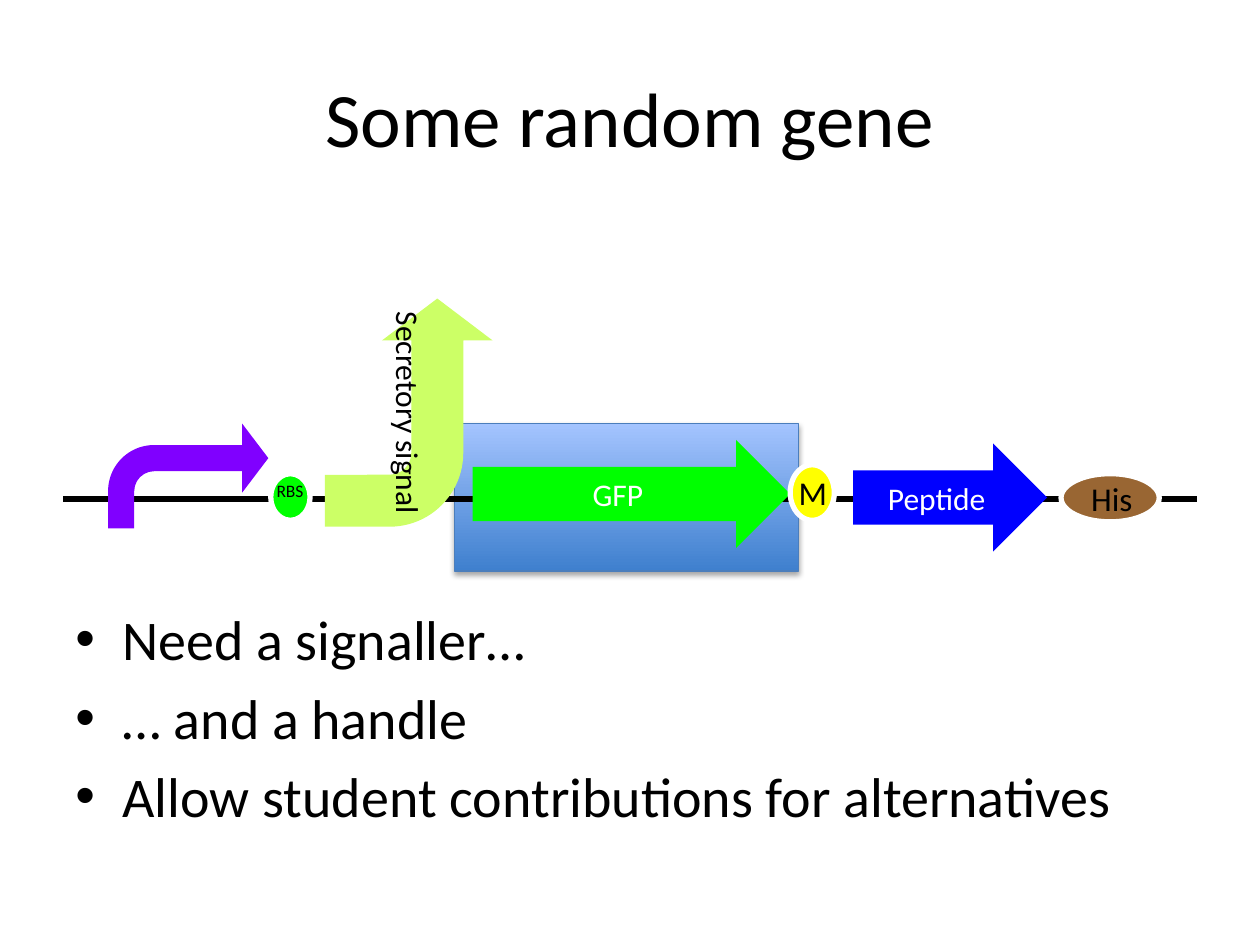
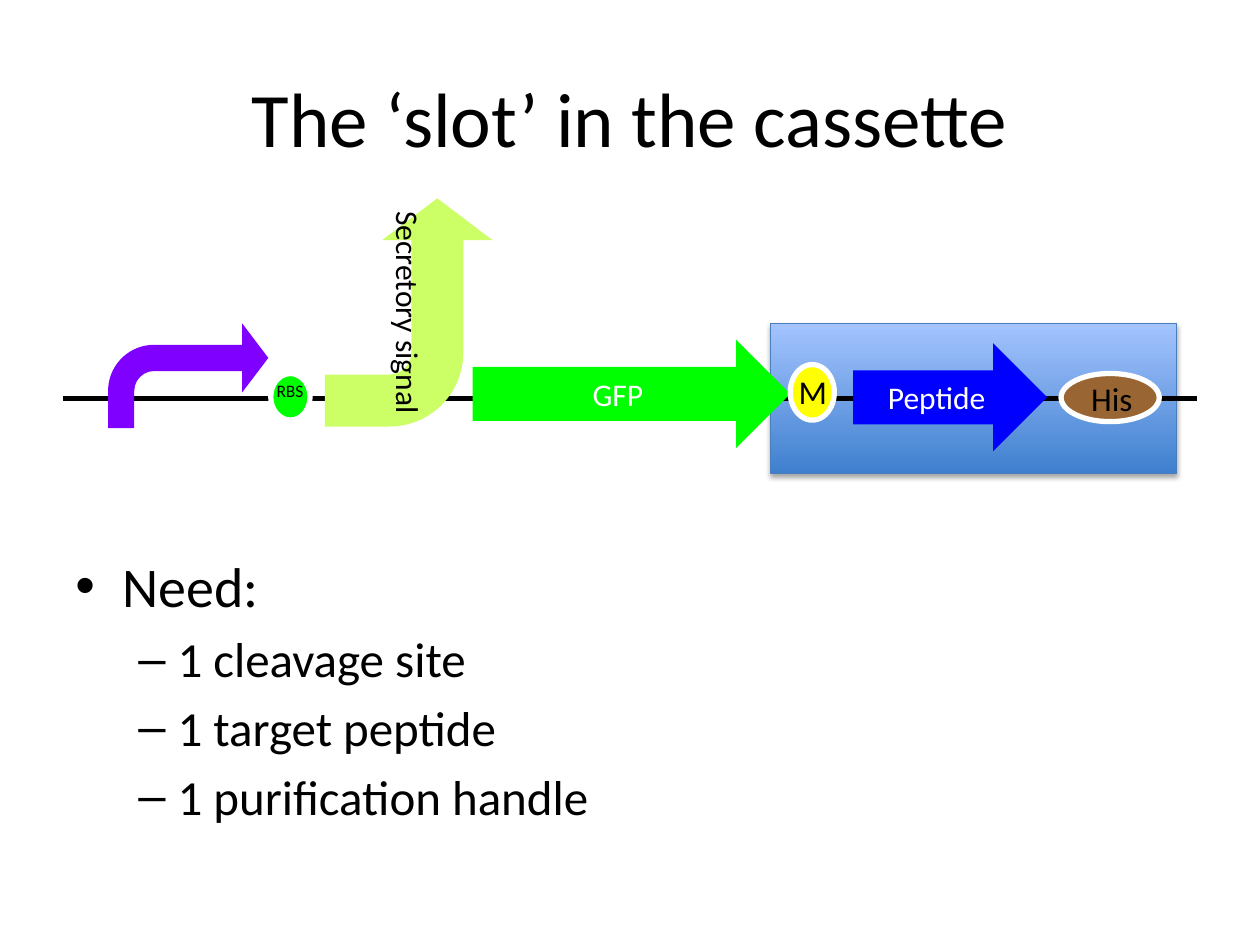
from lxml.etree import SubElement
from pptx import Presentation
from pptx.dml.color import RGBColor
from pptx.enum.shapes import MSO_CONNECTOR, MSO_SHAPE as Preset
from pptx.enum.text import MSO_ANCHOR as Anchor, PP_ALIGN as Align
from pptx.oxml.ns import qn
from pptx.util import Cm, Pt

BLACK = RGBColor(0x00, 0x00, 0x00)
WHITE = RGBColor(0xFF, 0xFF, 0xFF)
PURPLE = RGBColor(0x80, 0x00, 0xFF)
GREEN = RGBColor(0x00, 0xFF, 0x00)
LIME = RGBColor(0xCC, 0xFF, 0x66)
YELLOW = RGBColor(0xFF, 0xFF, 0x00)
BLUE = RGBColor(0x00, 0x00, 0xFF)
BROWN = RGBColor(0x99, 0x66, 0x33)
SLOT_DARK = RGBColor(0x3F, 0x80, 0xCE)
SLOT_LIGHT = RGBColor(0xA4, 0xC4, 0xFF)
SLOT_EDGE = RGBColor(0x4B, 0x7E, 0xBC)

FONT = "Calibri"
MARGIN, CONTENT_WIDTH = 1.27, 22.86
# Per list level: bullet, text size, left indent and hanging indent in cm
LEVELS = (("•", 32, 0.95, 0.95), ("–", 28, 2.06, 0.79))


class GeneDeck:
    """Holds the deck, the current page and the height of its DNA strand."""

    def __init__(self):
        self.deck = Presentation()
        self.deck.slide_width, self.deck.slide_height = Cm(25.4), Cm(19.05)
        self.page = None
        self.strand_y = 0

    def add_page(self, title, strand_y):
        self.page = self.deck.slides.add_slide(self.deck.slide_layouts[5])
        self.strand_y = strand_y
        box = self.page.shapes.title
        box.left, box.top = Cm(MARGIN), Cm(0.76)
        box.width, box.height = Cm(CONTENT_WIDTH), Cm(3.18)
        self.set_text(box, title, 44, BLACK)

    def set_text(self, box, text, size, color, align=Align.CENTER,
                 anchor=Anchor.MIDDLE, tight=False):
        frame = box.text_frame
        frame.word_wrap = True
        frame.vertical_anchor = anchor
        if tight:
            frame.margin_left = frame.margin_right = 0
            frame.margin_top = frame.margin_bottom = 0
        frame.text = text
        para = frame.paragraphs[0]
        para.alignment = align
        self.style(para, size, color)

    def style(self, para, size, color):
        para.font.name, para.font.size = FONT, Pt(size)
        para.font.color.rgb = color

    def place(self, left, rise, width, height):
        """Turn a position relative to the strand into slide lengths."""
        return Cm(left), Cm(self.strand_y + rise), Cm(width), Cm(height)

    def add_part(self, preset, area, color, outlined=False, adjust=()):
        part = self.page.shapes.add_shape(preset, *self.place(*area))
        part.shadow.inherit = False
        part.fill.solid()
        part.fill.fore_color.rgb = color
        if outlined:
            part.line.color.rgb, part.line.width = WHITE, Pt(3)
        else:
            part.line.fill.background()
        for index, value in enumerate(adjust):
            part.adjustments[index] = value
        return part

    def add_label(self, area, text, align=Align.CENTER):
        box = self.page.shapes.add_textbox(*self.place(*area))
        self.set_text(box, text, 19, BLACK, align, tight=True)

    def add_slot(self, area):
        slot = self.page.shapes.add_shape(Preset.RECTANGLE, *self.place(*area))
        slot.fill.gradient()
        slot.fill.gradient_angle = 90
        for stop, color in zip(slot.fill.gradient_stops, (SLOT_DARK, SLOT_LIGHT)):
            stop.color.rgb = color
        slot.line.color.rgb, slot.line.width = SLOT_EDGE, Pt(0.75)
        # Soft shadow below
        slot.shadow.inherit = False
        effects = slot.element.spPr.find(qn("a:effectLst"))
        shadow = SubElement(effects, qn("a:outerShdw"), blurRad=str(Pt(3.1)),
                            dist=str(Pt(1.8)), dir="5400000", rotWithShape="0")
        tint = SubElement(shadow, qn("a:srgbClr"), val="000000")
        SubElement(tint, qn("a:alpha"), val="35000")

    def add_strand(self):
        y = Cm(self.strand_y)
        strand = self.page.shapes.add_connector(
            MSO_CONNECTOR.STRAIGHT, Cm(MARGIN), y, Cm(MARGIN + CONTENT_WIDTH), y)
        strand.line.color.rgb, strand.line.width = BLACK, Pt(3)
        SubElement(strand.element.spPr, qn("a:effectLst"))

    def add_cassette(self):
        self.add_strand()

        # Promoter
        self.add_part(Preset.BENT_ARROW, (2.18, -1.52, 3.23, 2.11), PURPLE,
                      adjust=(0.25, 0.33, 0.25, 0.44))

        # Reporter, secretory signal and ribosome binding site
        reporter = self.add_part(Preset.RIGHT_ARROW, (9.53, -1.19, 6.4, 2.18), GREEN)
        self.set_text(reporter, "GFP", 18, WHITE)
        signal = self.add_part(Preset.BENT_ARROW, (5.94, -3.43, 4.6, 3.38), LIME,
                               adjust=(0.31, 0.33, 0.25, 0.44))
        signal.rotation = 270
        signal.element.spPr.find(qn("a:xfrm")).set("flipV", "1")
        self.set_text(signal, "Secretory signal", 18, BLACK)
        binding = self.add_part(Preset.OVAL, (5.46, -0.51, 0.79, 0.94), GREEN, True)
        self.set_text(binding, "RBS", 10, BLACK, Align.LEFT, Anchor.TOP, tight=True)

        # Cleavage site
        self.add_part(Preset.OVAL, (15.93, -0.69, 0.89, 1.12), YELLOW, True)
        self.add_label((16.1, -0.69, 0.71, 1.09), "M", Align.LEFT)

        # Target peptide
        peptide = self.add_part(Preset.RIGHT_ARROW, (17.2, -1.12, 3.91, 2.18), BLUE)
        self.set_text(peptide, "Peptide", 18, WHITE)

        # Purification handle
        self.add_part(Preset.OVAL, (21.39, -0.51, 1.98, 0.97), BROWN, True)
        self.add_label((21.59, -0.56, 1.65, 1.09), "His")

    def add_bullets(self, top, height, items):
        box = self.page.shapes.add_textbox(
            Cm(MARGIN), Cm(top), Cm(CONTENT_WIDTH), Cm(height))
        frame = box.text_frame
        frame.word_wrap = True
        for index, (level, text) in enumerate(items):
            para = frame.add_paragraph() if index else frame.paragraphs[0]
            bullet, size, indent, hanging = LEVELS[level]
            para.text, para.level = text, level
            para.space_before = Pt(size * 0.2)
            self.style(para, size, BLACK)
            props = para._p.get_or_add_pPr()
            props.set("marL", str(Cm(indent)))
            props.set("indent", str(-Cm(hanging)))
            SubElement(props, qn("a:buFont"), typeface="Arial")
            SubElement(props, qn("a:buChar"), char=bullet)
            # The bullet must stand before the text defaults
            props.append(props.find(qn("a:defRPr")))


def main():
    gene = GeneDeck()

    # Gene with the reporter slot
    gene.add_page("Some random gene", 10.06)
    gene.add_slot((9.17, -1.52, 6.93, 2.97))
    gene.add_cassette()
    gene.add_bullets(12.07, 4.95, [
        (0, "Need a signaller…"),
        (0, "… and a handle"),
        (0, "Allow student contributions for alternatives"),
    ])

    # Cassette with the peptide slot
    gene.add_page("The ‘slot’ in the cassette", 8.04)
    gene.add_slot((15.54, -1.52, 8.18, 3.02))
    gene.add_cassette()
    gene.add_bullets(11, 6.02, [
        (0, "Need:"),
        (1, "1 cleavage site"),
        (1, "1 target peptide"),
        (1, "1 purification handle"),
    ])

    gene.deck.save("out.pptx")


if __name__ == "__main__":
    main()
